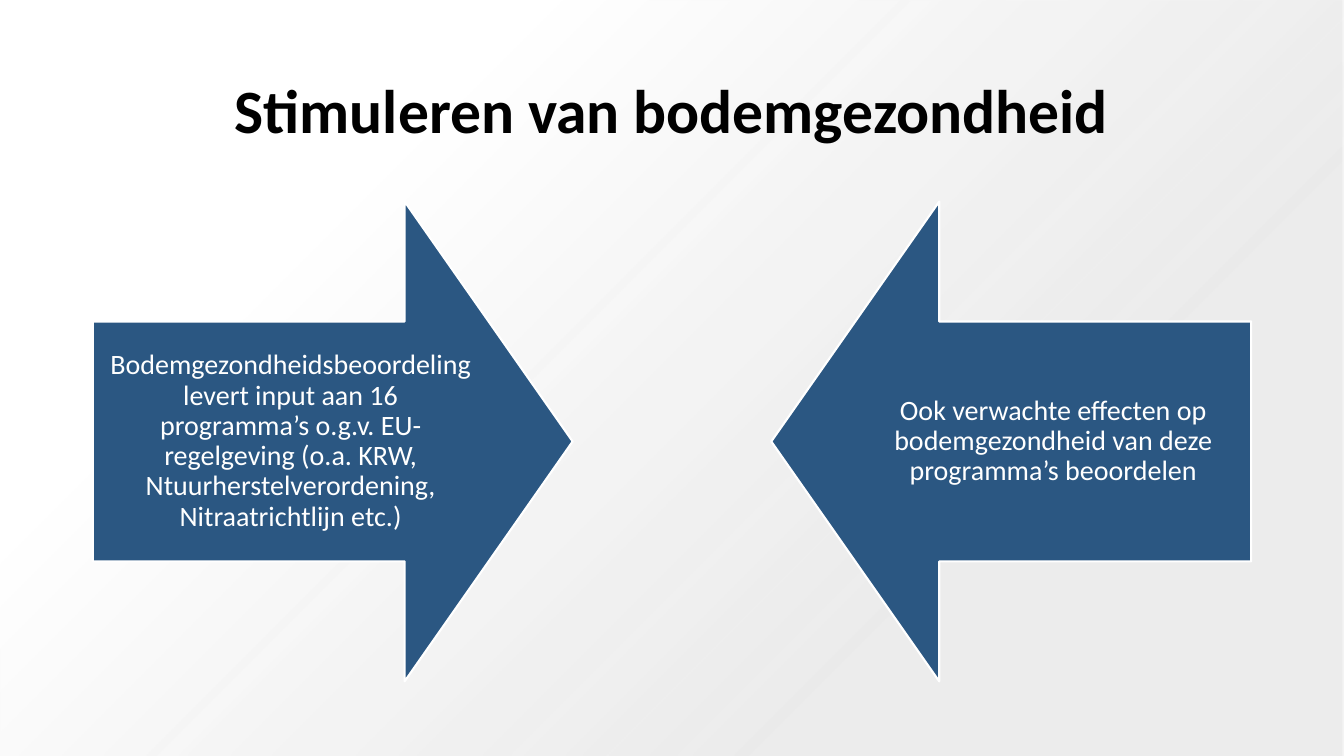
from pptx import Presentation
from pptx import oxml
from pptx.dml.color import RGBColor
from pptx.enum import shapes, text
from pptx.util import Inches, Pt

COLORS = {"arrow": "2B5782", "light": "FFFFFF", "title": "000000", "glow": "E8E8E8"}
FONT = "Calibri"
SLIDE_WIDTH, SLIDE_HEIGHT = 13.33, 7.5
MARGIN = 0.92
ARROW_SIZE = 4.76

GRADIENT = f"""
<a:gradFill xmlns:a="http://schemas.openxmlformats.org/drawingml/2006/main" rotWithShape="1">
  <a:gsLst>
    <a:gs pos="28000"><a:srgbClr val="{COLORS['glow']}"><a:alpha val="84000"/></a:srgbClr></a:gs>
    <a:gs pos="74000"><a:srgbClr val="{COLORS['light']}"/></a:gs>
  </a:gsLst>
  <a:path path="circle"><a:fillToRect l="100000" t="100000"/></a:path>
</a:gradFill>"""


def color(name):
    return RGBColor.from_string(COLORS[name])


def write(frame, words, size, ink, bold=False):
    """Put one centred paragraph in the middle of a text frame."""
    frame.word_wrap = True
    frame.vertical_anchor = text.MSO_ANCHOR.MIDDLE
    para = frame.paragraphs[0]
    para.alignment = text.PP_ALIGN.CENTER
    para.line_spacing = 0.9
    span = para.add_run()
    span.text = words
    span.font.name = FONT
    span.font.size = Pt(size)
    span.font.bold = bold
    span.font.color.rgb = color(ink)


def add_background(page, left, top, width, height):
    panel = page.shapes.add_shape(
        shapes.MSO_SHAPE.RECTANGLE, Inches(left), Inches(top), Inches(width), Inches(height))
    panel.shadow.inherit = False
    panel.line.fill.background()
    # Radial gradient centred on the bottom right corner
    panel.fill.background()
    properties = panel.element.spPr
    no_fill = properties.find(oxml.ns.qn("a:noFill"))
    properties.replace(no_fill, oxml.parse_xml(GRADIENT))


def add_title(page, left, top, width, height, words):
    box = page.shapes.add_textbox(Inches(left), Inches(top), Inches(width), Inches(height))
    write(box.text_frame, words, 44, "title", bold=True)


def add_arrow(page, left, top, size, kind, words):
    arrow = page.shapes.add_shape(kind, Inches(left), Inches(top), Inches(size), Inches(size))
    arrow.adjustments[0] = 0.5
    arrow.adjustments[1] = 0.35
    arrow.shadow.inherit = False
    arrow.fill.solid()
    arrow.fill.fore_color.rgb = color("arrow")
    arrow.line.color.rgb = color("light")
    arrow.line.width = Pt(1.5)
    frame = arrow.text_frame
    frame.margin_left = frame.margin_right = Inches(0.16)
    frame.margin_top = frame.margin_bottom = Inches(0.16)
    write(frame, words, 20, "light")


def main():
    deck = Presentation()
    deck.slide_width = Inches(SLIDE_WIDTH)
    deck.slide_height = Inches(SLIDE_HEIGHT)
    page = deck.slides.add_slide(deck.slide_layouts[6])

    add_background(page, 0, 0, SLIDE_WIDTH, SLIDE_HEIGHT)
    add_title(page, MARGIN, 0.4, SLIDE_WIDTH - 2 * MARGIN, 1.45, "Stimuleren van bodemgezondheid")

    # Two arrows pointing at each other
    add_arrow(page, MARGIN, 2, ARROW_SIZE, shapes.MSO_SHAPE.RIGHT_ARROW,
              "Bodemgezondheidsbeoordeling levert input aan 16 programma’s o.g.v. EU-regelgeving "
              "(o.a. KRW, Ntuurherstelverordening, Nitraatrichtlijn etc.)")
    add_arrow(page, SLIDE_WIDTH - MARGIN - ARROW_SIZE, 2, ARROW_SIZE, shapes.MSO_SHAPE.LEFT_ARROW,
              "Ook verwachte effecten op bodemgezondheid van deze programma’s beoordelen")

    deck.save("out.pptx")


if __name__ == "__main__":
    main()
